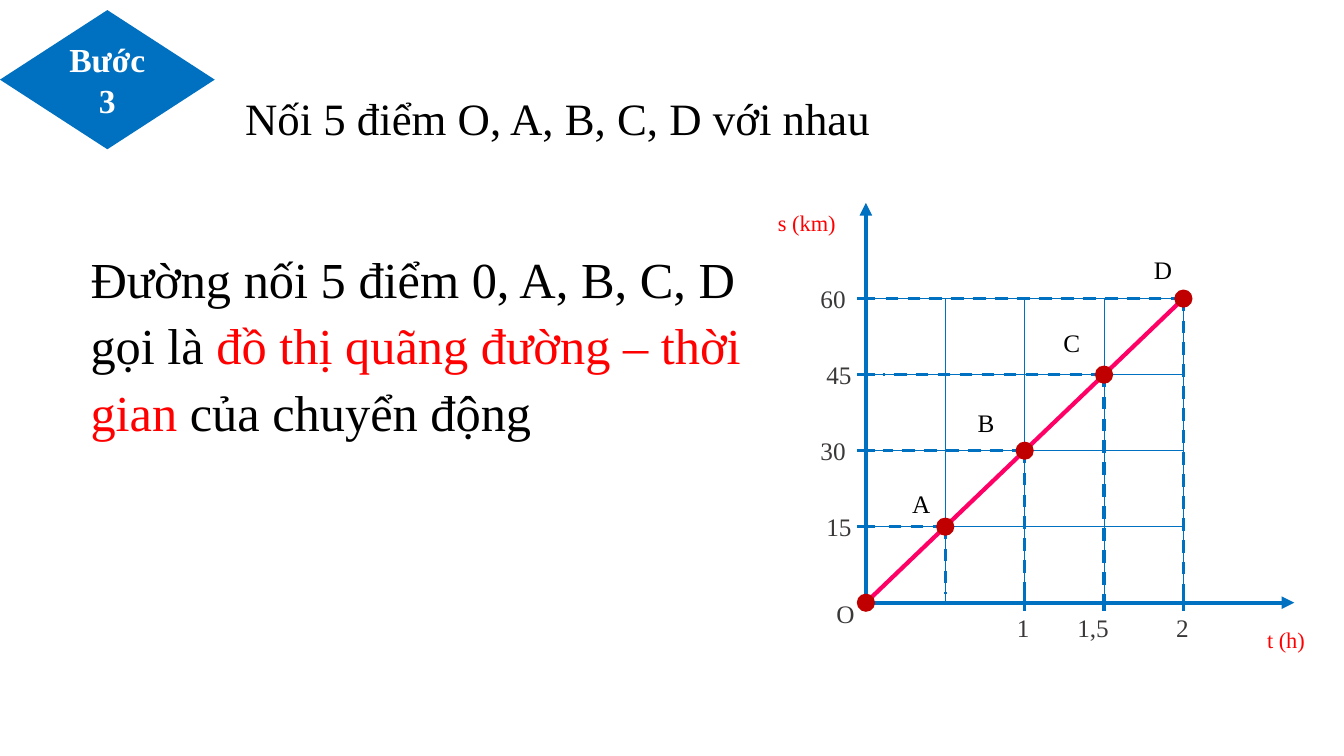
from typing import NamedTuple

from lxml import etree
from pptx import Presentation
from pptx.dml.color import RGBColor
from pptx.enum.dml import MSO_LINE_DASH_STYLE as DASH
from pptx.enum.shapes import MSO_CONNECTOR, MSO_SHAPE
from pptx.enum.text import MSO_ANCHOR, MSO_AUTO_SIZE, PP_ALIGN
from pptx.oxml.ns import qn
from pptx.util import Pt

FONT = "Times New Roman"
BLUE = RGBColor(0x00, 0x70, 0xC0)
PINK = RGBColor(0xFF, 0x00, 0x66)
DARK_RED = RGBColor(0xC0, 0x00, 0x00)
RED = RGBColor(0xFF, 0x00, 0x00)
GRAY = RGBColor(0x3B, 0x38, 0x38)
BLACK = RGBColor(0x00, 0x00, 0x00)
WHITE = RGBColor(0xFF, 0xFF, 0xFF)

# The graph: origin and size of one grid cell, in points
X0, Y0 = 618.5, 430.5
STEP_X, STEP_Y = 56.7, 54.3
CELLS = 4
TICK = 6.25
DOT = 13


class Label(NamedTuple):
    text: str
    left: float
    top: float
    width: float
    size: float = 18
    color: RGBColor = GRAY
    spacing: float = 1.0


def grid_x(k: float) -> float:
    return X0 + k * STEP_X


def grid_y(k: float) -> float:
    return Y0 - k * STEP_Y


LABELS = [
    Label("O", 590.4, 424, 24),
    Label("t (h)", 898, 442, 52, 16, RED, 1.1),
    Label("s (km)", 548.6, 144, 65, 16, RED, 1.1),
    Label("1", 719.3, 434, 24),
    Label("1,5", 762.5, 434, 53),
    Label("2", 833, 434, 24),
    Label("15", 583.2, grid_y(1) - 14.5, 40),
    Label("30", 579, grid_y(2) - 14.5, 50),
    Label("45", 583.2, grid_y(3) - 14.5, 50),
    Label("60", 579, grid_y(4) - 14.5, 50),
    Label("A", 644.4, 345.6, 43, color=BLACK),
    Label("B", 691.2, 287.3, 43, color=BLACK),
    Label("C", 752.4, 230.4, 43, color=BLACK),
    Label("D", 817.2, 177.8, 43, color=BLACK),
]


def add_run(p, text: str, *, size: float, color: RGBColor, bold: bool = False) -> None:
    r = p.add_run()
    r.text = text
    r.font.name = FONT
    r.font.size = Pt(size)
    r.font.bold = bold
    r.font.color.rgb = color


def place(sp, left: float, top: float, width: float, height: float) -> None:
    sp.left, sp.top, sp.width, sp.height = Pt(left), Pt(top), Pt(width), Pt(height)


def add_text_box(s, left: float, top: float, width: float, height: float, spacing: float):
    """Add a wrapping text box and return its first paragraph."""
    tf = s.shapes.add_textbox(Pt(left), Pt(top), Pt(width), Pt(height)).text_frame
    tf.word_wrap = True
    p = tf.paragraphs[0]
    p.line_spacing = spacing
    return p


def add_line(s, x1: float, y1: float, x2: float, y2: float, *, width: float = 2.25,
             color: RGBColor = BLUE, dashed: bool = False, arrow: bool = False) -> None:
    cn = s.shapes.add_connector(MSO_CONNECTOR.STRAIGHT, Pt(x1), Pt(y1), Pt(x2), Pt(y2))
    cn.line.color.rgb = color
    cn.line.width = Pt(width)
    if dashed:
        cn.line.dash_style = DASH.DASH
    if arrow:
        etree.SubElement(cn.line._get_or_add_ln(), qn("a:tailEnd"), type="triangle")
    etree.SubElement(cn._element.spPr, qn("a:effectLst"))


def add_filled(s, shape: MSO_SHAPE, left: float, top: float, width: float,
               height: float, color: RGBColor):
    sp = s.shapes.add_shape(shape, Pt(left), Pt(top), Pt(width), Pt(height))
    sp.shadow.inherit = False
    sp.fill.solid()
    sp.fill.fore_color.rgb = color
    sp.line.fill.background()
    return sp


def add_grid(s) -> None:
    tbl = s.shapes.add_table(CELLS, CELLS, Pt(X0), Pt(grid_y(CELLS)),
                             Pt(CELLS * STEP_X), Pt(CELLS * STEP_Y)).table
    tbl.first_row = tbl.horz_banding = False
    for cell in tbl.iter_cells():
        tcPr = cell._tc.get_or_add_tcPr()
        for side in ("lnL", "lnR", "lnT", "lnB"):
            ln = etree.SubElement(tcPr, qn(f"a:{side}"), w=str(Pt(0.5)))
            fill = etree.SubElement(ln, qn("a:solidFill"))
            etree.SubElement(fill, qn("a:srgbClr"), val=str(BLUE))
        cell.fill.background()


def add_graph(s) -> None:
    add_grid(s)
    add_line(s, X0, Y0, X0, 145, width=3, arrow=True)
    add_line(s, X0, Y0, 924.5, Y0, width=3, arrow=True)
    for k in range(1, CELLS + 1):
        x, y = grid_x(k), grid_y(k)
        add_line(s, X0 - TICK, y, X0 + TICK, y)
        if k > 1:
            add_line(s, x, Y0 - TICK, x, Y0 + TICK)
        add_line(s, x, y, X0 + 2 * TICK, y, dashed=True)
        add_line(s, x, y, x, Y0 - TICK, dashed=True)
    add_line(s, X0, Y0, grid_x(CELLS), grid_y(CELLS), width=3, color=PINK)
    for k in range(CELLS + 1):
        add_filled(s, MSO_SHAPE.OVAL, grid_x(k) - DOT / 2, grid_y(k) - DOT / 2,
                   DOT, DOT, DARK_RED)
    for lb in LABELS:
        p = add_text_box(s, lb.left, lb.top, lb.width, 28.8, lb.spacing)
        add_run(p, lb.text, size=lb.size, color=lb.color)


def main() -> None:
    prs = Presentation()
    prs.slide_width, prs.slide_height = Pt(960), Pt(540)
    s = prs.slides.add_slide(prs.slide_layouts[5])

    title = s.shapes.title
    place(title, 167.8, 57.6, 476.6, 46.8)
    tf = title.text_frame
    tf.word_wrap = True
    tf.auto_size = MSO_AUTO_SIZE.NONE
    tf.vertical_anchor = MSO_ANCHOR.TOP
    p = tf.paragraphs[0]
    p.alignment = PP_ALIGN.LEFT
    p.line_spacing = 1.1
    add_run(p, "Nối 5 điểm O, A, B, C, D với nhau", size=32, color=BLACK)

    step = add_filled(s, MSO_SHAPE.DIAMOND, 0, 7.2, 153.4, 99.4, BLUE)
    step.text_frame.vertical_anchor = MSO_ANCHOR.MIDDLE
    p = step.text_frame.paragraphs[0]
    p.alignment = PP_ALIGN.CENTER
    add_run(p, "Bước 3", size=24, color=WHITE, bold=True)

    p = add_text_box(s, 57.6, 169.2, 489.6, 151.2, 1.1)
    for text, color in (("Đường nối 5 điểm 0, A, B, C, D gọi là ", BLACK),
                        ("đồ thị quãng đường – thời gian ", RED),
                        ("của chuyển động", BLACK)):
        add_run(p, text, size=36, color=color)

    add_graph(s)
    prs.save("out.pptx")


if __name__ == "__main__":
    main()
